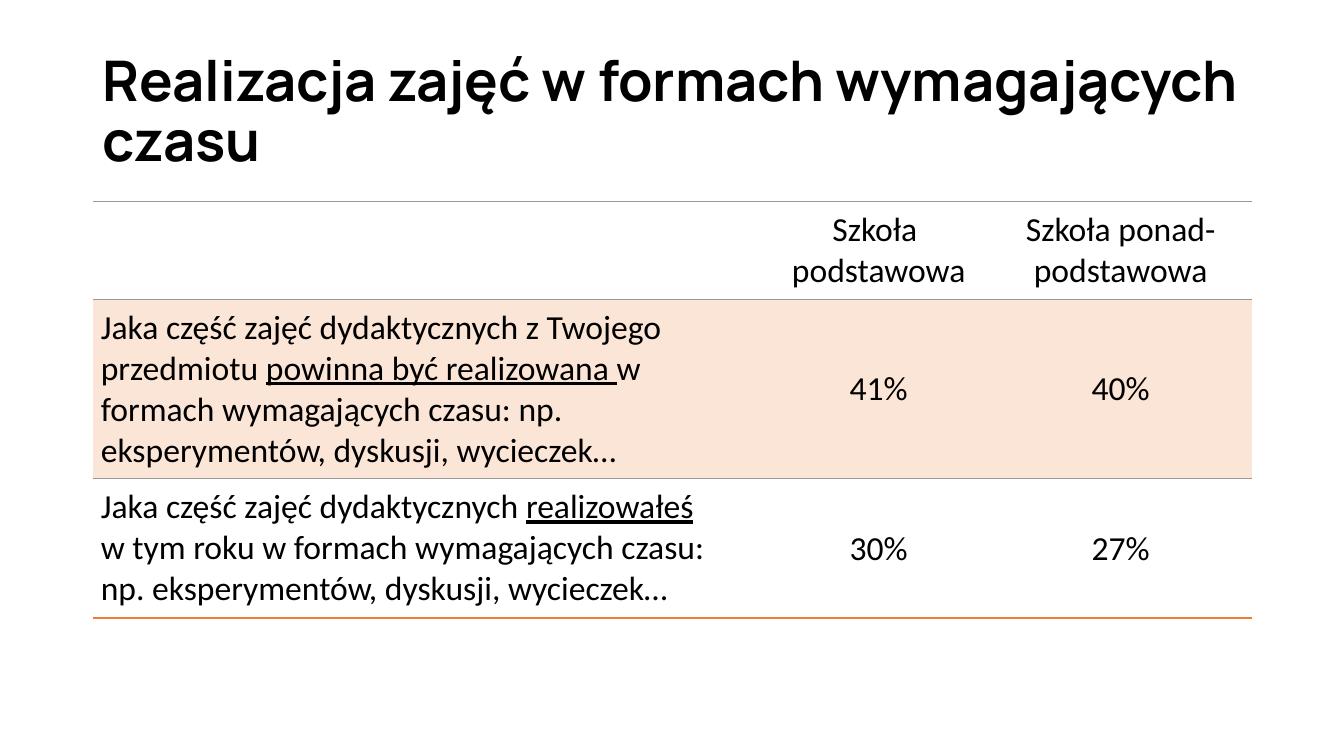
from lxml import etree
from pptx import Presentation
from pptx.dml.color import RGBColor
from pptx.enum.text import MSO_ANCHOR, PP_ALIGN
from pptx.oxml.ns import qn
from pptx.util import Inches, Pt

MIDDLE, BOTTOM = MSO_ANCHOR.MIDDLE, MSO_ANCHOR.BOTTOM
CENTER, LEFT = PP_ALIGN.CENTER, PP_ALIGN.LEFT
BLACK = RGBColor(0x00, 0x00, 0x00)
PEACH = RGBColor(0xFB, 0xE5, 0xD6)
ORANGE = RGBColor(0xED, 0x7D, 0x31)
GRAY = RGBColor(0x99, 0x99, 0x99)
NO_GRID_STYLE = "{2D5ABB26-0587-4C30-8999-92F81FD0307C}"

# Content: each cell is a list of (text, underlined) spans
TITLE = "Realizacja zajęć w formach wymagających czasu"
ROWS = [
    [[],
     [("Szkoła \npodstawowa", False)],
     [("Szkoła ponad-podstawowa", False)]],
    [[("Jaka część zajęć dydaktycznych z Twojego przedmiotu ", False),
      ("powinna być realizowana ", True),
      ("w formach wymagających czasu: np. eksperymentów, dyskusji, wycieczek…", False)],
     [("41%", False)],
     [("40%", False)]],
    [[("Jaka część zajęć dydaktycznych ", False),
      ("realizowałeś", True),
      (" \nw tym roku w formach wymagających czasu: \n"
       "np. eksperymentów, dyskusji, wycieczek…", False)],
     [("30%", False)],
     [("27%", False)]],
]
COLUMN_WIDTHS = [6.7, 2.19, 2.61]
ROW_HEIGHTS = [0.97, 1.78, 1.38]
ROW_FILLS = [None, PEACH, None]
# Per row: {border tag: (colour, points)}
ROW_BORDERS = [
    {"a:lnT": (GRAY, 0.75), "a:lnB": (GRAY, 0.75)},
    {"a:lnT": (GRAY, 0.75)},
    {"a:lnB": (ORANGE, 1.5)},
]
LEFT_EDGE, CONTENT_WIDTH = 0.92, 11.5


def style_font(font, name, size):
    font.name = name
    font.size = Pt(size)
    font.color.rgb = BLACK


def add_border(cell, tag, color, points):
    line = etree.SubElement(cell._tc.get_or_add_tcPr(), qn(tag), w=str(Pt(points)))
    fill = etree.SubElement(line, qn("a:solidFill"))
    etree.SubElement(fill, qn("a:srgbClr"), val=str(color))


def write_spans(para, spans):
    for text, underlined in spans:
        for index, piece in enumerate(text.split("\n")):
            if index:
                para.add_line_break()
            span = para.add_run()
            span.text = piece
            style_font(span.font, "Calibri", 24)
            span.font.underline = underlined


deck = Presentation()
deck.slide_width, deck.slide_height = Inches(13.33), Inches(7.5)
page = deck.slides.add_slide(deck.slide_layouts[6])

# Title
box = page.shapes.add_textbox(Inches(LEFT_EDGE), Inches(0.4),
                              Inches(CONTENT_WIDTH), Inches(1.45))
box.text_frame.word_wrap = True
box.text_frame.vertical_anchor = MIDDLE
box.text_frame.text = TITLE
para = box.text_frame.paragraphs[0]
para.line_spacing = 0.9
style_font(para.runs[0].font, "Manrope", 40)
para.runs[0].font.bold = True

# Table
table = page.shapes.add_table(
    len(ROWS), len(COLUMN_WIDTHS), Inches(LEFT_EDGE), Inches(2),
    Inches(CONTENT_WIDTH), Inches(sum(ROW_HEIGHTS))).table
table.first_row = table.horz_banding = False
table._tbl.tblPr.find(qn("a:tableStyleId")).text = NO_GRID_STYLE
for column, width in zip(table.columns, COLUMN_WIDTHS):
    column.width = Inches(width)
for row, height in zip(table.rows, ROW_HEIGHTS):
    row.height = Inches(height)

for r, row in enumerate(ROWS):
    for c, spans in enumerate(row):
        cell = table.cell(r, c)
        is_question = c == 0
        is_value = r > 0 and c > 0
        inset = Inches(0.01 if is_value else 0.08)
        cell.margin_left = cell.margin_right = cell.margin_top = inset
        cell.margin_bottom = 0 if is_value else inset
        cell.vertical_anchor = BOTTOM if is_question else MIDDLE
        for tag, (color, points) in ROW_BORDERS[r].items():
            add_border(cell, tag, color, points)
        if ROW_FILLS[r] is None:
            cell.fill.background()
        else:
            cell.fill.solid()
            cell.fill.fore_color.rgb = ROW_FILLS[r]
        para = cell.text_frame.paragraphs[0]
        para.alignment = LEFT if is_question else CENTER
        write_spans(para, spans)

deck.save("out.pptx")
